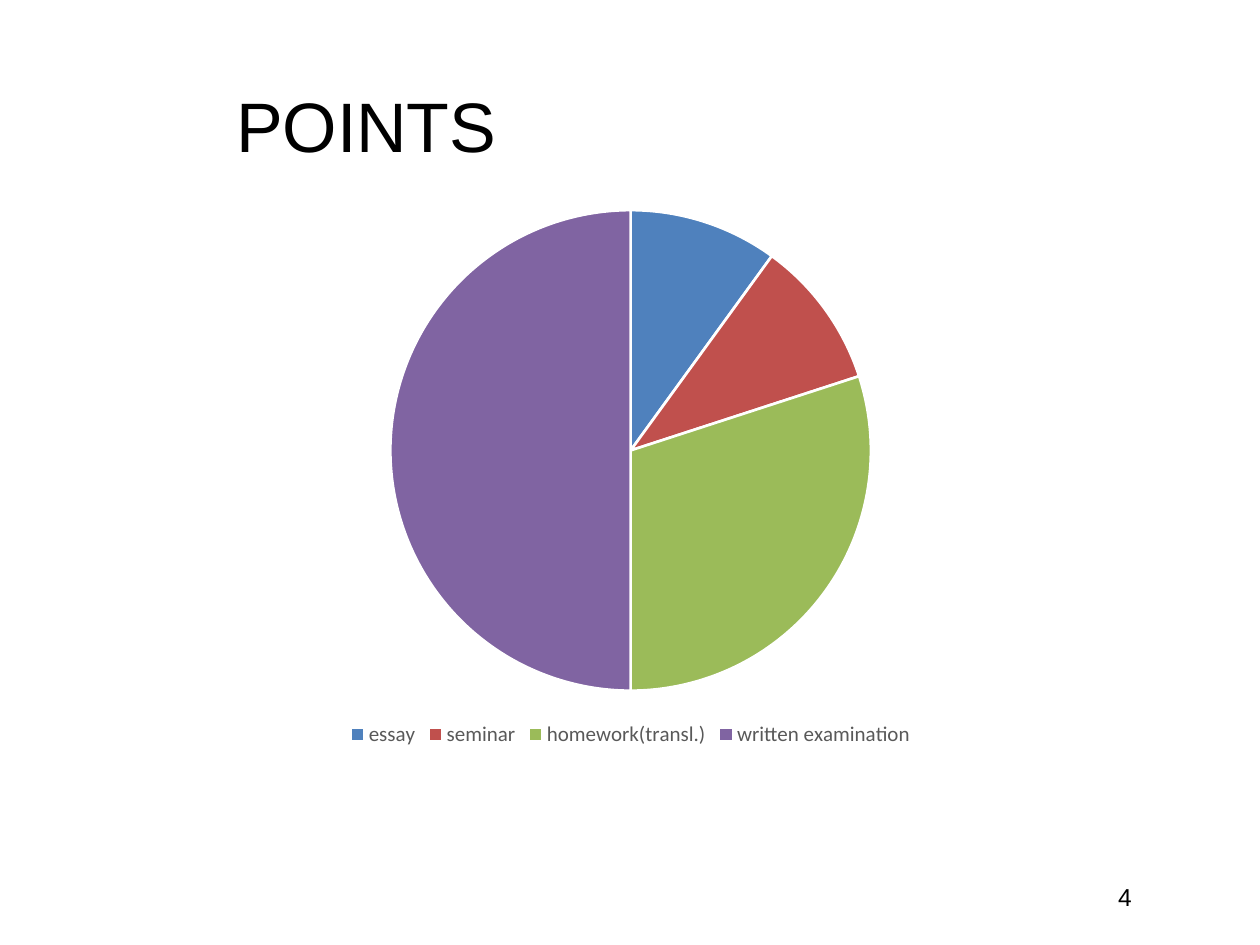
from pptx import Presentation
from pptx.chart.data import CategoryChartData
from pptx.dml.color import RGBColor
from pptx.enum.chart import XL_CHART_TYPE, XL_LEGEND_POSITION
from pptx.enum.text import MSO_ANCHOR, PP_ALIGN
from pptx.util import Pt

PIE = XL_CHART_TYPE.PIE
BOTTOM = XL_LEGEND_POSITION.BOTTOM
TOP, MIDDLE = MSO_ANCHOR.TOP, MSO_ANCHOR.MIDDLE
LEFT, RIGHT = PP_ALIGN.LEFT, PP_ALIGN.RIGHT

COLORS = {
    "text": "000000", "legend": "595959", "border": "FFFFFF",
    "blue": "4F81BD", "red": "C0504D", "green": "9BBB59", "purple": "8064A2",
}
TITLE = "POINTS"
PAGE_NUMBER = "4"
POINTS = [
    ("essay", 10, "blue"),
    ("seminar", 10, "red"),
    ("homework(transl.)", 30, "green"),
    ("written examination", 50, "purple"),
]
TITLE_BOX = (116.64, 25.92, 535.68, 90.72)
NUMBER_BOX = (592.56, 500.4, 61.2, 28.8)
CHART_BOX = (120.24, 110.16, 480.24, 319.68)


def rgb(name):
    return RGBColor.from_string(COLORS[name])


def style_font(font, name, size, color):
    font.name = name
    font.size = Pt(size)
    font.color.rgb = rgb(color)


def add_text(s, box, text, size, align, anchor, inset=7.2):
    tf = s.shapes.add_textbox(*map(Pt, box)).text_frame
    tf.word_wrap = True
    tf.vertical_anchor = anchor
    tf.margin_left = Pt(inset)
    p = tf.paragraphs[0]
    p.alignment = align
    r = p.add_run()
    r.text = text
    style_font(r.font, "Arial", size, "text")


def add_points_chart(s):
    data = CategoryChartData()
    data.categories = [label for label, _, _ in POINTS]
    data.add_series("Series 1", [value for _, value, _ in POINTS])
    chart = s.shapes.add_chart(PIE, *map(Pt, CHART_BOX), data).chart
    style_font(chart.font, "Calibri", 10, "text")
    chart.has_title = False
    chart.has_legend = True
    chart.legend.position = BOTTOM
    chart.legend.include_in_layout = False
    style_font(chart.legend.font, "Calibri", 12, "legend")
    plot = chart.plots[0]
    plot.vary_by_categories = True
    for i, (_, _, color) in enumerate(POINTS):
        fmt = plot.series[0].points[i].format
        fmt.fill.solid()
        fmt.fill.fore_color.rgb = rgb(color)
        fmt.line.color.rgb = rgb("border")
        fmt.line.width = Pt(1.5)


prs = Presentation()
prs.slide_width, prs.slide_height = Pt(720), Pt(540)
s = prs.slides.add_slide(prs.slide_layouts[6])
add_text(s, TITLE_BOX, TITLE, 40, LEFT, MIDDLE, inset=18.3)
add_text(s, NUMBER_BOX, PAGE_NUMBER, 14, RIGHT, TOP)
add_points_chart(s)
prs.save("out.pptx")
